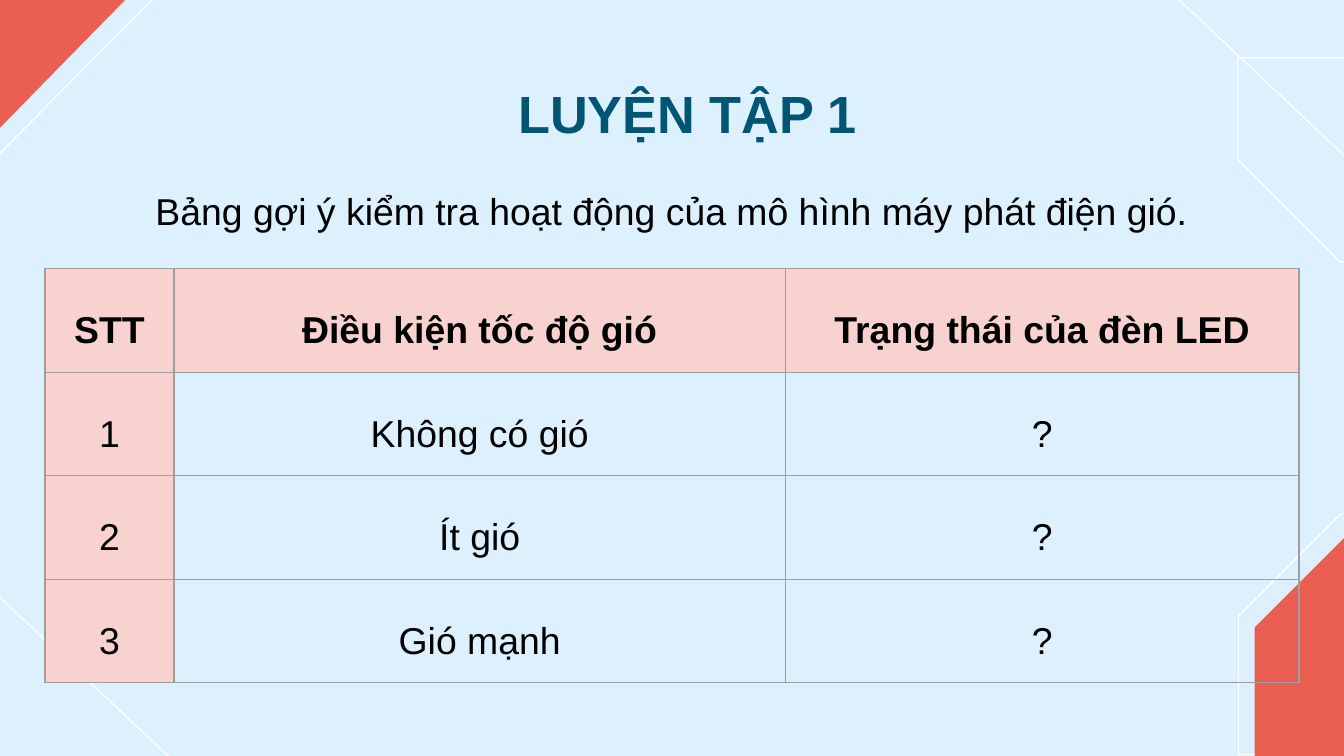
import pptx
import pptx.util
import pptx.dml.color
import pptx.enum.shapes
import pptx.enum.text
import pptx.oxml
import pptx.oxml.ns

PX = 4572  # EMU per px, 200 px to the inch
RED, PINK, NAVY, GREY = "EB5E52", "F7D2CF", "005474", "9E9E9E"
SHAPE = pptx.enum.shapes.MSO_SHAPE
ANCHOR = pptx.enum.text.MSO_ANCHOR


def color(value):
    return pptx.dml.color.RGBColor.from_string(value)


def format_text(para, size, value="000000", bold=False):
    para.alignment = pptx.enum.text.PP_ALIGN.CENTER
    for span in para.runs:
        span.font.name = "Arial"
        span.font.size = pptx.util.Pt(size)
        span.font.bold = bold
        span.font.color.rgb = color(value)


deck = pptx.Presentation()
deck.slide_width, deck.slide_height = 2000 * PX, 1125 * PX
page = deck.slides.add_slide(deck.slide_layouts[5])
page.background.fill.solid()
page.background.fill.fore_color.rgb = color("DCF0FD")

# Corner decoration: kind, left, top, width, height, rotation, fill
TRIANGLE, SNIPPED = SHAPE.RIGHT_TRIANGLE, SHAPE.SNIP_2_DIAG_RECTANGLE
decoration = [
    (TRIANGLE, 1738, -16, 282, 266, 180, None),
    (SNIPPED, 1842, 86, 358, 304, 0, None),
    (TRIANGLE, -16, 874, 282, 266, 0, None),
    (SNIPPED, 1816, 792, 358, 304, 270, None),
    (SNIPPED, 1840, 814, 348, 294, 270, RED),
    (TRIANGLE, -16, -24, 268, 266, 90, None),
    (TRIANGLE, -2, 0, 192, 188, 90, RED),
]
for kind, left, top, width, height, rotation, fill in decoration:
    corner = page.shapes.add_shape(kind, left * PX, top * PX, width * PX, height * PX)
    corner.rotation = rotation
    corner.shadow.inherit = False
    if kind == SNIPPED:
        corner.adjustments[0] = 0
        corner.adjustments[1] = 0.5
    if fill:
        corner.fill.solid()
        corner.fill.fore_color.rgb = color(fill)
        corner.line.fill.background()
    else:
        corner.fill.background()
        corner.line.color.rgb = color("FFFFFF")
        corner.line.width = pptx.util.Pt(0.75)

# Title
title = page.shapes.title
title.left, title.top, title.width, title.height = 180 * PX, 101 * PX, 1686 * PX, 324 * PX
frame = title.text_frame
frame.text = "LUYỆN TẬP 1"
frame.auto_size = pptx.enum.text.MSO_AUTO_SIZE.NONE
frame.vertical_anchor = ANCHOR.TOP
frame.margin_left = frame.margin_right = frame.margin_top = frame.margin_bottom = 20 * PX
format_text(frame.paragraphs[0], 28, NAVY, True)

# Table of wind conditions
rows = [
    ("STT", "Điều kiện tốc độ gió", "Trạng thái của đèn LED"),
    ("1", "Không có gió", "?"),
    ("2", "Ít gió", "?"),
    ("3", "Gió mạnh", "?"),
]
table = page.shapes.add_table(4, 3, 67 * PX, 400 * PX, 1866 * PX, 616 * PX).table
table.horz_banding = False
table.first_row = False
for column, width in zip(table.columns, (192, 910, 764)):
    column.width = width * PX
for row_index, texts in enumerate(rows):
    table.rows[row_index].height = 154 * PX
    for column_index, text in enumerate(texts):
        cell = table.cell(row_index, column_index)
        cell.text_frame.text = text
        cell.vertical_anchor = ANCHOR.MIDDLE
        cell.margin_left = cell.margin_right = 14 * PX
        cell.margin_top = cell.margin_bottom = 0
        para = cell.text_frame.paragraphs[0]
        para.line_spacing = 1.5
        para.space_after = pptx.util.Pt(10)
        format_text(para, 20, bold=row_index == 0)

        # Borders come before the fill in the cell properties
        properties = cell._tc.get_or_add_tcPr()
        for side in ("lnL", "lnR", "lnT", "lnB"):
            properties.append(pptx.oxml.parse_xml(
                f'<a:{side} {pptx.oxml.ns.nsdecls("a")} w="9525"><a:solidFill>'
                f'<a:srgbClr val="{GREY}"/></a:solidFill></a:{side}>'))
        if row_index == 0 or column_index == 0:
            cell.fill.solid()
            cell.fill.fore_color.rgb = color(PINK)
        else:
            cell.fill.background()

# Caption above the table
box = page.shapes.add_textbox(134 * PX, 237 * PX, 1732 * PX, 108 * PX)
box.text_frame.word_wrap = True
box.text_frame.text = "Bảng gợi ý kiểm tra hoạt động của mô hình máy phát điện gió."
para = box.text_frame.paragraphs[0]
para.line_spacing = 1.5
para.space_after = pptx.util.Pt(10)
format_text(para, 20)

deck.save("out.pptx")
